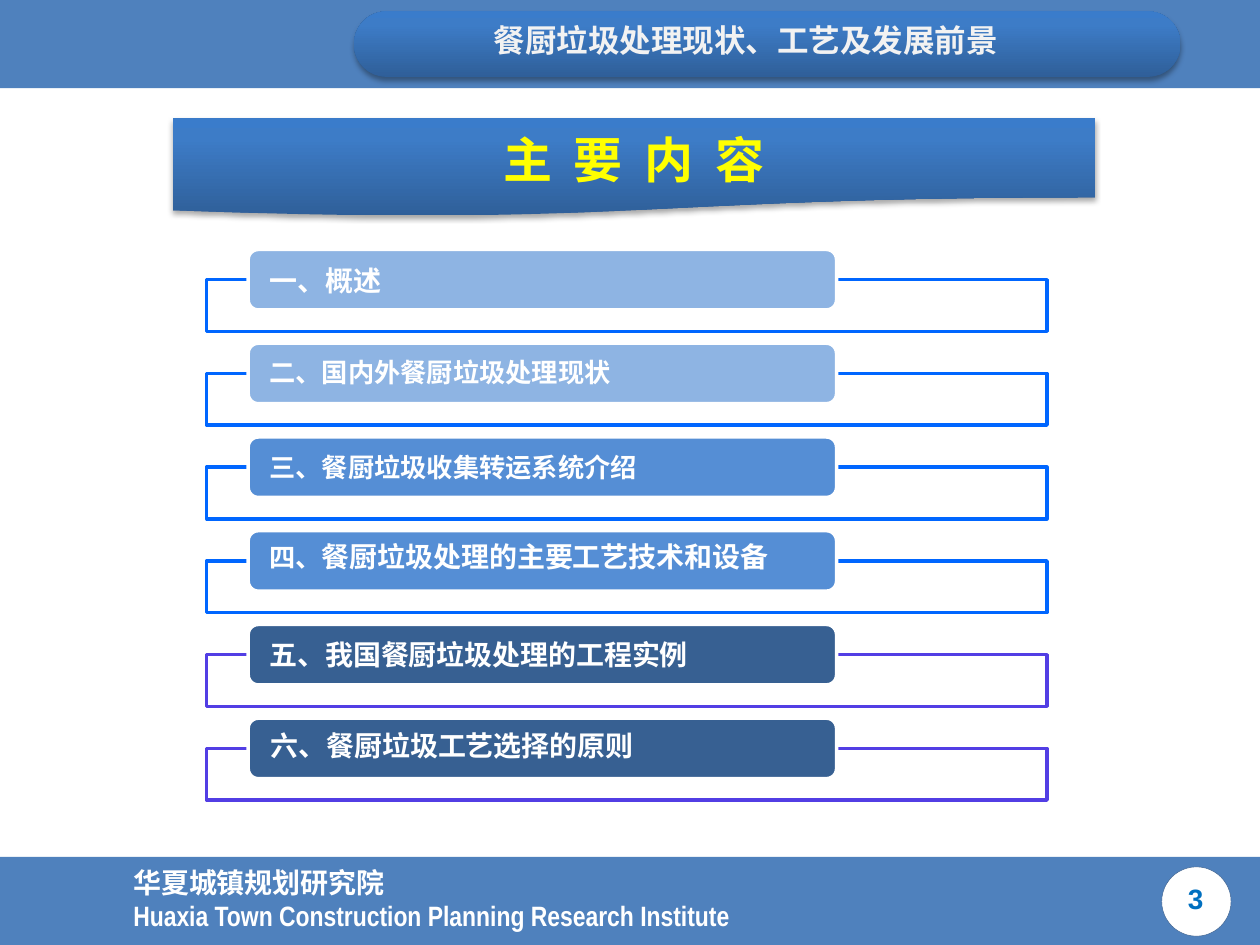
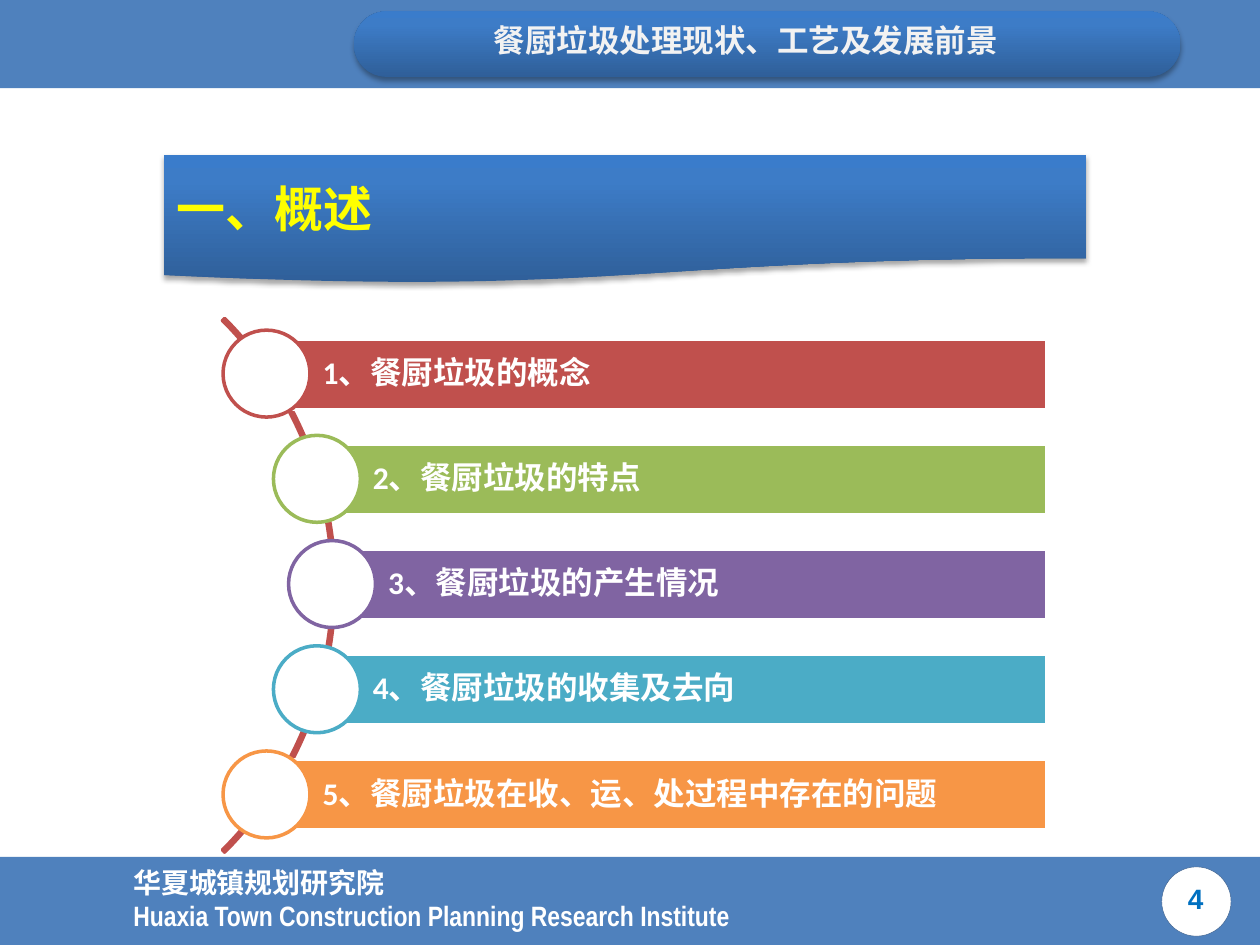
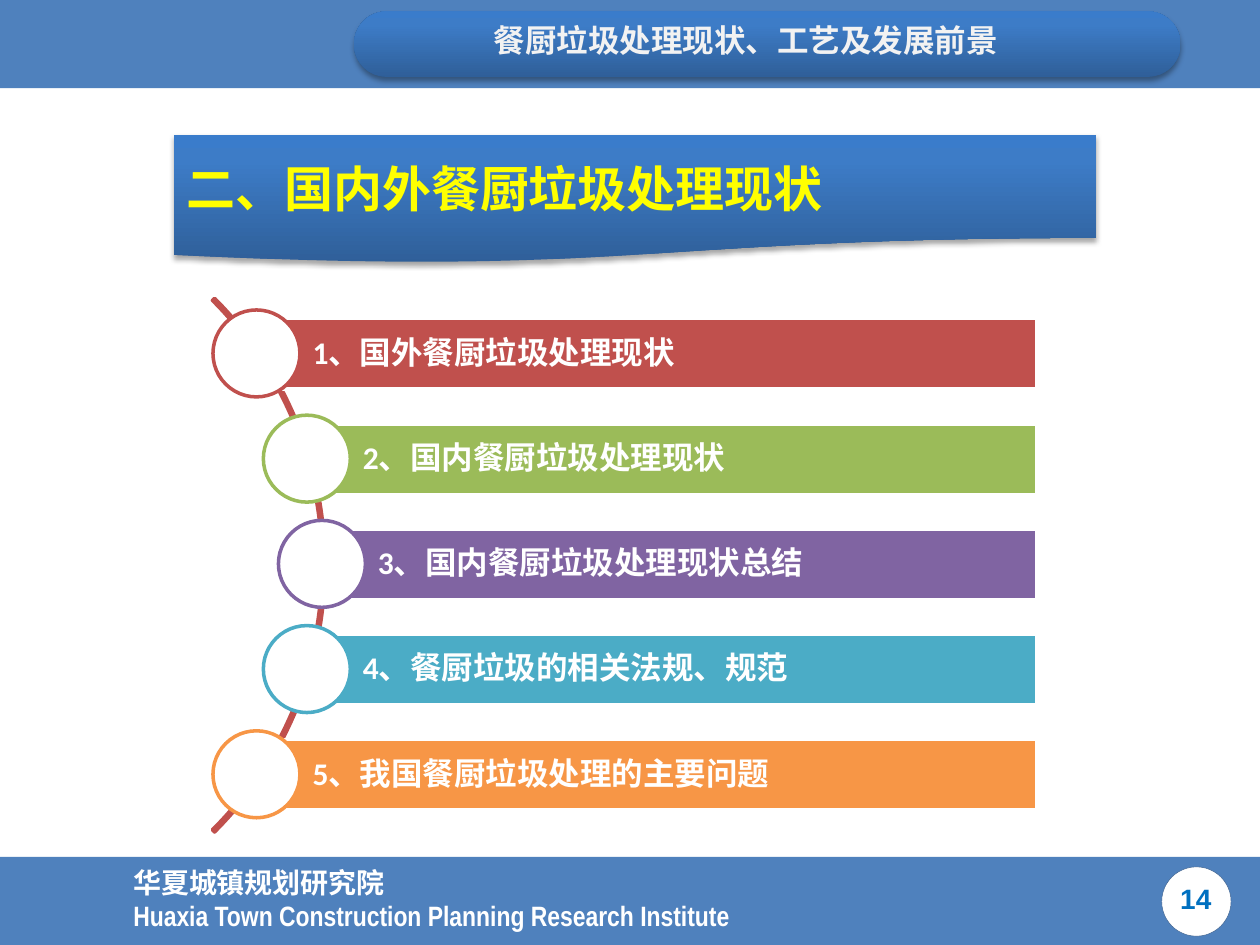
from copy import deepcopy
from dataclasses import dataclass
from typing import NamedTuple

from lxml.etree import SubElement
from pptx import Presentation
from pptx.dml.color import RGBColor as Rgb
from pptx.enum.shapes import MSO_SHAPE as Form
from pptx.enum.text import MSO_ANCHOR as Anchor, MSO_AUTO_SIZE as Fit, PP_ALIGN as Align
from pptx.oxml.ns import qn
from pptx.util import Inches, Pt

WHITE = Rgb(0xFF, 0xFF, 0xFF)
PALE = Rgb(0xF2, 0xF2, 0xF2)
BAND = Rgb(0x4F, 0x81, 0xBD)
RIM = Rgb(0x3A, 0x5F, 0x8C)
NUMBER = Rgb(0x00, 0x70, 0xC0)
YELLOW = Rgb(0xFF, 0xFF, 0x00)
LIGHT = Rgb(0x8E, 0xB4, 0xE3)
MIDDLE = Rgb(0x55, 0x8E, 0xD5)
DARK = Rgb(0x37, 0x60, 0x92)
AZURE = Rgb(0x00, 0x66, 0xFF)
VIOLET = Rgb(0x52, 0x3E, 0xE4)
RED = Rgb(0xC0, 0x50, 0x4D)
GREEN = Rgb(0x9B, 0xBB, 0x59)
PURPLE = Rgb(0x80, 0x64, 0xA2)
TEAL = Rgb(0x4B, 0xAC, 0xC6)
ORANGE = Rgb(0xF7, 0x96, 0x46)
STOPS = (
    (0, Rgb(0x2F, 0x5F, 0x99)),
    (0.8, Rgb(0x3D, 0x7C, 0xC7)),
    (1, Rgb(0x3A, 0x7C, 0xCB)),
)
HAN = "Noto Sans CJK SC"


class Box(NamedTuple):
    left: float
    top: float
    width: float
    height: float


class Style(NamedTuple):
    size: float
    color: Rgb = WHITE
    font: str = HAN
    bold: bool = True


class Run(NamedTuple):
    text: str
    style: Style


@dataclass
class Row:
    runs: list[Run]
    label: Box
    fill: Rgb
    line: Rgb


@dataclass
class Part:
    number: str
    title: str
    ribbon: Box
    left: float
    top: float
    items: list[str]


SMALL = Style(15)
LARGE = Style(16)
HEAD = Style(28, YELLOW, "Arial")
ITEM = Style(18, font="Calibri")

ROWS = [
    Row([Run("一、概述", LARGE)], Box(2.04, 2.04, 3.83, 0.37), LIGHT, AZURE),
    Row([Run("二、国内外餐厨垃圾处理现状", SMALL)], Box(2.04, 2.78, 3.83, 0.35), LIGHT, AZURE),
    Row([Run("三、餐厨垃圾收集转运系统介绍", SMALL)], Box(2.04, 3.53, 3.2, 0.35), MIDDLE, AZURE),
    Row([Run("四、", SMALL), Run("餐厨垃圾处理的主要工艺技术和设备", LARGE)],
        Box(2.04, 4.23, 4.24, 0.37), MIDDLE, AZURE),
    Row([Run("五、我国餐厨垃圾处理的工程实例", LARGE)], Box(2.04, 5.01, 3.59, 0.37), DARK, VIOLET),
    Row([Run("六、餐厨垃圾工艺选择的原则", LARGE)], Box(2.05, 5.73, 3.2, 0.37), DARK, VIOLET),
]
ROW_STEP = 3.72 / 5

PARTS = [
    Part("4", "一、概述", Box(1.3, 1.23, 7.32, 1.02), 2.12, 2.69, [
        "1、餐厨垃圾的概念",
        "2、餐厨垃圾的特点",
        "3、餐厨垃圾的产生情况",
        "4、餐厨垃圾的收集及去向",
        "5、餐厨垃圾在收、运、处过程中存在的问题",
    ]),
    Part("14", "二、国内外餐厨垃圾处理现状", Box(1.38, 1.07, 7.32, 1.02), 2.04, 2.53, [
        "1、国外餐厨垃圾处理现状",
        "2、国内餐厨垃圾处理现状",
        "3、国内餐厨垃圾处理现状总结",
        "4、餐厨垃圾的相关法规、规范",
        "5、我国餐厨垃圾处理的主要问题",
    ]),
]
BAR_STEP = 3.34 / 4
BAR_WIDTH = 6.19
SHIFTS = (0, 0.4, 0.52, 0.4, 0)
HUES = (RED, GREEN, PURPLE, TEAL, ORANGE)
FLAT = 0.82


def place(shape, box: Box) -> None:
    shape.left, shape.top, shape.width, shape.height = map(Inches, box)


def add_run(para, run: Run) -> None:
    piece = para.add_run()
    piece.text = run.text
    font = piece.font
    font.size = Pt(run.style.size)
    font.bold = run.style.bold
    font.name = run.style.font
    font.color.rgb = run.style.color
    SubElement(font._element, qn("a:ea"), typeface=HAN)


def write(shape, lines: list[list[Run]], align=Align.LEFT, anchor=Anchor.TOP) -> None:
    frame = shape.text_frame
    frame.word_wrap = True
    frame.auto_size = Fit.NONE
    frame.vertical_anchor = anchor
    for i, runs in enumerate(lines):
        para = frame.add_paragraph() if i else frame.paragraphs[0]
        para.alignment = align
        for run in runs:
            add_run(para, run)


def add_text(slide, box: Box, runs: list[Run], align=Align.LEFT):
    shape = slide.shapes.add_textbox(*map(Inches, box))
    write(shape, [runs], align)
    return shape


def add_form(slide, form: Form, box: Box, fill: Rgb | None = None,
             line: Rgb | None = None, weight: float = 2):
    shape = slide.shapes.add_shape(form, *map(Inches, box))
    shape.shadow.inherit = False
    if fill is None:
        shape.fill.background()
    else:
        shape.fill.solid()
        shape.fill.fore_color.rgb = fill
    if line is None:
        shape.line.fill.background()
    else:
        shape.line.color.rgb = line
        shape.line.width = Pt(weight)
    return shape


def add_gloss(slide, form: Form, box: Box):
    shape = add_form(slide, form, box)
    fill = shape.fill
    fill.gradient()
    fill.gradient_angle = 90
    props = shape.element.spPr
    stops = props.find(".//" + qn("a:gsLst"))
    stops.append(deepcopy(stops[-1]))
    for stop, (spot, color) in zip(fill.gradient_stops, STOPS):
        stop.position = spot
        stop.color.rgb = color
    shade = SubElement(props.find(qn("a:effectLst")), qn("a:outerShdw"),
                       blurRad=str(Pt(3.1)), dist=str(Pt(1.8)), dir="5400000", rotWithShape="0")
    tint = SubElement(shade, qn("a:srgbClr"), val="000000")
    SubElement(tint, qn("a:alpha"), val="35000")
    return shape


def add_title(slide, box: Box, text: str, align=Align.LEFT, gap: int = 0) -> None:
    ribbon = add_gloss(slide, Form.FLOWCHART_DOCUMENT, box)
    title = slide.shapes.title
    title.element.addprevious(ribbon.element)
    place(title, box._replace(height=box.height * FLAT))
    write(title, [[Run(text, HEAD)]], align, Anchor.MIDDLE)
    if gap:
        title.text_frame.paragraphs[0].runs[0].font._element.set("spc", str(gap))


def frame_layout(layout, slide) -> None:
    for holder in list(layout.placeholders):
        if holder.placeholder_format.idx:
            holder.element.getparent().remove(holder.element)
    foot = add_form(slide, Form.RECTANGLE, Box(0, 6.8, 10, 0.7), BAND)
    head = add_form(slide, Form.RECTANGLE, Box(0, 0, 10, 0.7), BAND)
    disc = add_form(slide, Form.OVAL, Box(9.22, 6.88, 0.55, 0.55), WHITE, RIM, 0.25)
    pill = add_gloss(slide, Form.ROUNDED_RECTANGLE, Box(2.81, 0.09, 6.56, 0.52))
    pill.adjustments[0] = 0.5
    owner = add_form(slide, Form.ROUNDED_RECTANGLE, Box(0.96, 6.9, 7.9, 0.47), BAND)
    owner.adjustments[0] = 0
    write(owner, [
        [Run("华夏城镇规划研究院", LARGE)],
        [Run("Huaxia Town Construction Planning Research Institute", Style(16, font="Arial Narrow"))],
    ], anchor=Anchor.MIDDLE)
    topic = add_text(slide, Box(3.82, 0.12, 4.33, 0.4),
                     [Run("餐厨垃圾处理现状、工艺及发展前景", Style(18, PALE))], Align.JUSTIFY)
    for shape in (foot, head, disc, pill, owner, topic):
        layout.shapes.element.append(shape.element)


def add_number(slide, number: str) -> None:
    add_text(slide, Box(8.98, 6.95, 1.02, 0.4),
             [Run(number, Style(16, NUMBER, "Arial"))], Align.CENTER)


def draw_rows(slide) -> None:
    for i, row in enumerate(ROWS):
        drop = i * ROW_STEP
        add_form(slide, Form.RECTANGLE, Box(1.64, 2.22 + drop, 6.67, 0.41), WHITE, row.line)
        add_form(slide, Form.ROUNDED_RECTANGLE, Box(1.97, 1.98 + drop, 4.67, 0.48), row.fill, WHITE)
        add_text(slide, row.label, row.runs)


def draw_part(slide, part: Part) -> None:
    add_number(slide, part.number)
    add_title(slide, part.ribbon, part.title)
    arc = add_form(slide, Form.BLOCK_ARC,
                   Box(part.left - 5.45, part.top - 1.04, 5.99, 5.99), line=RED)
    for i, value in enumerate((189, 27, 0.004)):
        arc.adjustments[i] = value
    for i, (text, shift, hue) in enumerate(zip(part.items, SHIFTS, HUES)):
        left, top = part.left + shift, part.top + i * BAR_STEP
        bar = add_form(slide, Form.RECTANGLE, Box(left, top, BAR_WIDTH - shift, 0.56), hue, WHITE)
        write(bar, [[Run(text, ITEM)]], anchor=Anchor.MIDDLE)
        bar.text_frame.margin_left = Inches(0.44)
        bar.text_frame.paragraphs[0].line_spacing = 0.9
        add_form(slide, Form.OVAL, Box(left - 0.35, top - 0.07, 0.69, 0.69), WHITE, hue)


def main() -> None:
    deck = Presentation()
    deck.slide_width, deck.slide_height = Inches(10), Inches(7.5)
    layout = deck.slide_layouts[5]
    slide = deck.slides.add_slide(layout)
    frame_layout(layout, slide)
    add_number(slide, "3")
    add_title(slide, Box(1.37, 0.94, 7.32, 0.78), "主 要 内 容", Align.CENTER, 310)
    draw_rows(slide)
    for part in PARTS:
        draw_part(deck.slides.add_slide(layout), part)
    deck.save("out.pptx")


if __name__ == "__main__":
    main()
